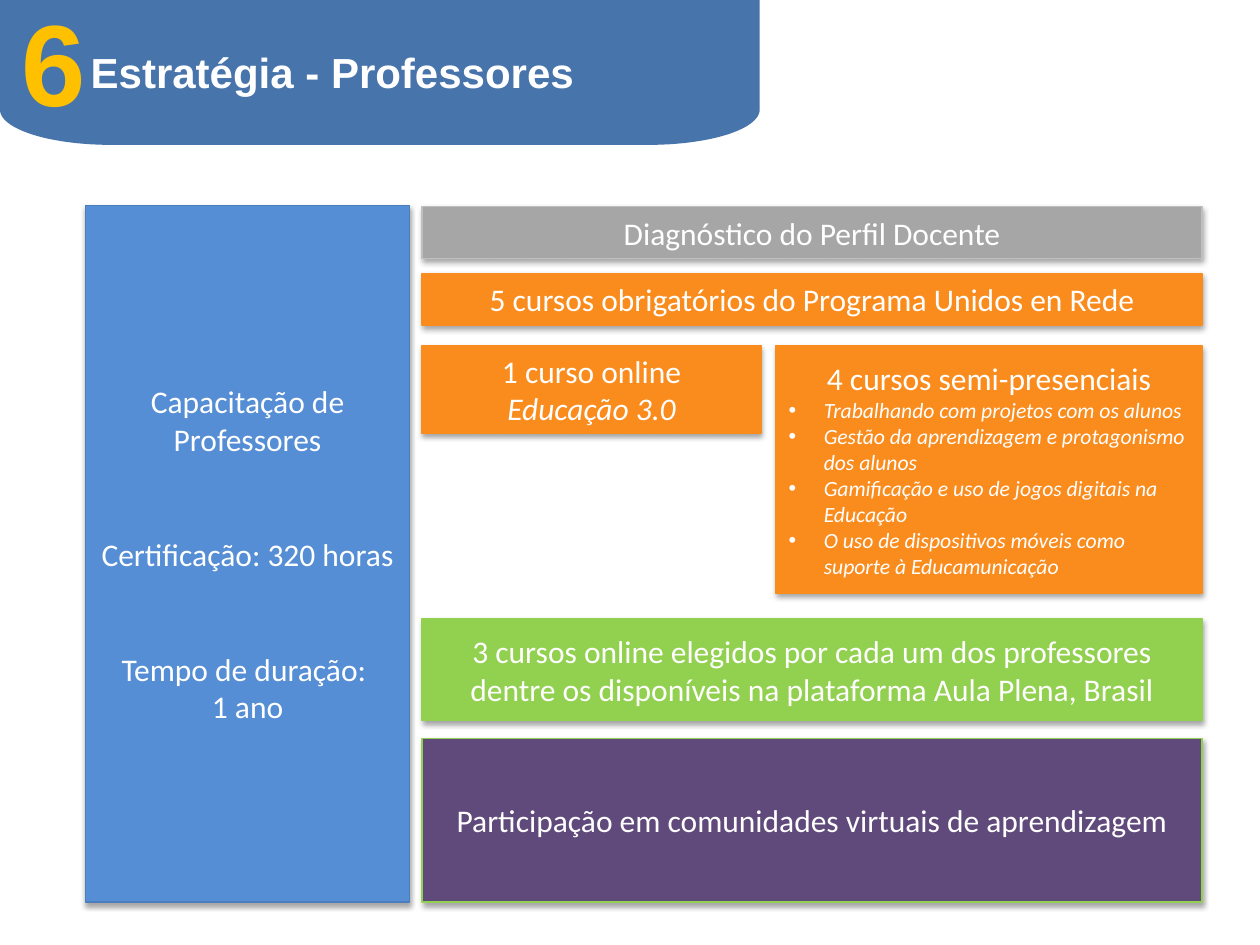
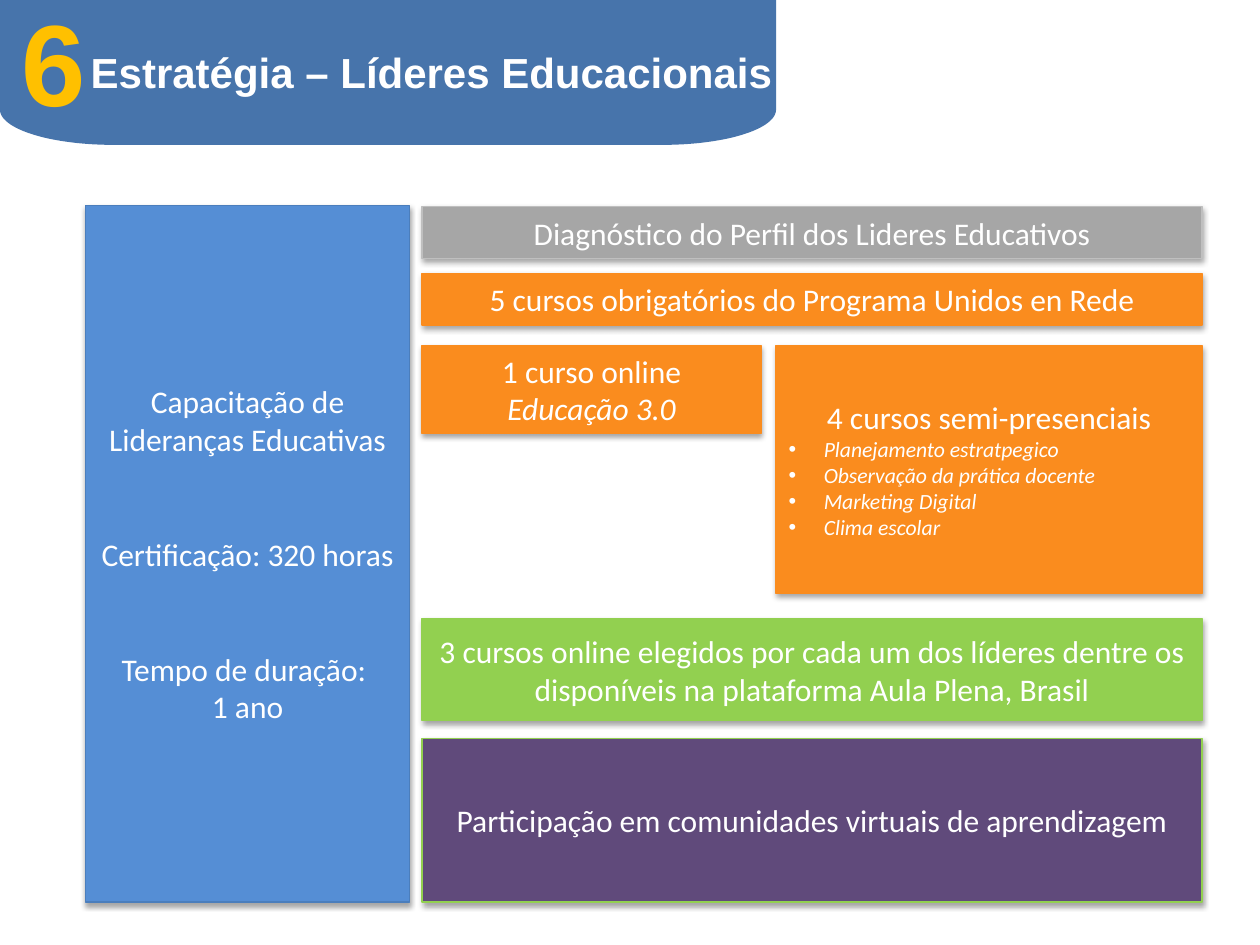
from dataclasses import dataclass
from math import cos, pi, sin

from lxml import etree
from pptx import Presentation
from pptx.dml.color import RGBColor
from pptx.enum.shapes import MSO_SHAPE
from pptx.enum.text import MSO_ANCHOR, PP_ALIGN
from pptx.oxml.ns import qn
from pptx.util import Inches, Pt

RECT = MSO_SHAPE.RECTANGLE
TOP, MIDDLE = MSO_ANCHOR.TOP, MSO_ANCHOR.MIDDLE
LEFT, CENTER = PP_ALIGN.LEFT, PP_ALIGN.CENTER

WHITE = RGBColor(0xFF, 0xFF, 0xFF)
BAND_BLUE = RGBColor(0x47, 0x74, 0xAB)
YELLOW = RGBColor(0xFF, 0xC0, 0x00)
BLUE = RGBColor(0x55, 0x8E, 0xD5)
BLUE_EDGE = RGBColor(0x4B, 0x7E, 0xBC)
GRAY = RGBColor(0xA6, 0xA6, 0xA6)
GRAY_EDGE = RGBColor(0xBF, 0xBF, 0xBF)
ORANGE = RGBColor(0xFA, 0x8C, 0x1E)
GREEN = RGBColor(0x92, 0xD0, 0x50)
PURPLE = RGBColor(0x60, 0x4A, 0x7B)

TITLE_FONT, BODY_FONT = "Arial", "Calibri"
COLUMN_LEFT, COLUMN_WIDTH = 3.35, 6.19
SECTION_GAP = Pt(44)
BULLET_INDENT = Inches(0.28)


@dataclass(frozen=True)
class Line:
    text: str
    italic: bool = False
    bullet: bool = False
    gap: bool = False


@dataclass(frozen=True)
class Card:
    lines: list[Line]
    top: float
    height: float
    fill: RGBColor
    edge: RGBColor
    left: float = COLUMN_LEFT
    width: float = COLUMN_WIDTH


@dataclass(frozen=True)
class Strategy:
    title: str
    band_width: float
    audience: str
    profile: str
    chooser: str
    courses: list[str]


STRATEGIES = [
    Strategy("Estratégia - Professores", 6.03, "Professores", "Docente", "professores", [
        "Trabalhando com projetos com os alunos",
        "Gestão da aprendizagem e protagonismo dos alunos",
        "Gamificação e uso de jogos digitais na Educação",
        "O uso de dispositivos móveis como suporte à Educamunicação",
    ]),
    Strategy("Estratégia – Líderes Educacionais", 6.16, "Lideranças Educativas",
             "dos Lideres Educativos", "líderes", [
                 "Planejamento estratpegico",
                 "Observação da prática docente",
                 "Marketing Digital",
                 "Clima escolar",
             ]),
]


def cards_for(strategy: Strategy) -> list[Card]:
    training = [
        Line(f"Capacitação de {strategy.audience}"),
        Line("Certificação: 320 horas", gap=True),
        Line("Tempo de duração: ", gap=True),
        Line("1 ano"),
    ]
    blended = [Line("4 cursos semi-presenciais")]
    blended += [Line(name, italic=True, bullet=True) for name in strategy.courses]
    elective = (f"3 cursos online elegidos por cada um dos {strategy.chooser} "
                "dentre os disponíveis na plataforma Aula Plena, Brasil")
    return [
        Card(training, 1.63, 5.53, BLUE, BLUE_EDGE, 0.68, 2.57),
        Card([Line(f"Diagnóstico do Perfil {strategy.profile}")], 1.64, 0.41, GRAY, GRAY_EDGE),
        Card([Line("5 cursos obrigatórios do Programa Unidos en Rede")],
             2.17, 0.41, ORANGE, ORANGE),
        Card([Line("1 curso online"), Line("Educação 3.0", italic=True)],
             2.74, 0.7, ORANGE, ORANGE, width=2.69),
        Card(blended, 2.74, 1.97, ORANGE, ORANGE, 6.16, 3.38),
        Card([Line(elective)], 4.91, 0.81, GREEN, GREEN),
        Card([Line("Participação em comunidades virtuais de aprendizagem")],
             5.86, 1.3, PURPLE, GREEN),
    ]


def format_run(r, font: str, size: float, color: RGBColor,
               bold: bool = False, italic: bool = False) -> None:
    r.font.name = font
    r.font.size = Pt(size)
    r.font.color.rgb = color
    r.font.bold = bold
    r.font.italic = italic


def add_bullet(p) -> None:
    pPr = p._p.get_or_add_pPr()
    pPr.set("marL", str(BULLET_INDENT))
    pPr.set("indent", str(-BULLET_INDENT))
    etree.SubElement(pPr, qn("a:buFont")).set("typeface", TITLE_FONT)
    etree.SubElement(pPr, qn("a:buChar")).set("char", "•")


def add_shadow(sp) -> None:
    sp.shadow.inherit = False
    effects = sp.element.spPr.find(qn("a:effectLst"))
    shadow = etree.SubElement(effects, qn("a:outerShdw"), blurRad=str(Pt(3.1)),
                              dist=str(Pt(1.8)), dir="5400000", rotWithShape="0")
    color = etree.SubElement(shadow, qn("a:srgbClr"), val="000000")
    etree.SubElement(color, qn("a:alpha"), val="35000")


def add_card(s, card: Card) -> None:
    sp = s.shapes.add_shape(RECT, Inches(card.left), Inches(card.top),
                            Inches(card.width), Inches(card.height))
    sp.fill.solid()
    sp.fill.fore_color.rgb = card.fill
    sp.line.color.rgb = card.edge
    sp.line.width = Pt(0.75)
    add_shadow(sp)
    tf = sp.text_frame
    tf.word_wrap = True
    tf.vertical_anchor = MIDDLE
    tf.text = "\n".join(line.text for line in card.lines)
    for p, line in zip(tf.paragraphs, card.lines):
        p.alignment = LEFT if line.bullet else CENTER
        if line.gap:
            p.space_before = SECTION_GAP
        if line.bullet:
            add_bullet(p)
        format_run(p.runs[0], BODY_FONT, 12.4 if line.bullet else 18, WHITE,
                   italic=line.italic)


def add_band(s, width: float):
    height, radius_y, steps = 1.15, 0.28, 24
    radius_x = width * 0.146
    angles = [pi / 2 * i / steps for i in range(steps + 1)]
    right = [(width - radius_x * (1 - cos(a)), height - radius_y * (1 - sin(a)))
             for a in angles]
    left = [(width - x, y) for x, y in reversed(right)]
    outline = [(width, 0), *right, *left]
    builder = s.shapes.build_freeform(0, 0)
    builder.add_line_segments([(Inches(x), Inches(y)) for x, y in outline], close=True)
    band = builder.convert_to_shape()
    band.fill.solid()
    band.fill.fore_color.rgb = BAND_BLUE
    band.line.fill.background()
    band.shadow.inherit = False
    return band


def set_heading(sp, text: str, size: float, color: RGBColor) -> None:
    tf = sp.text_frame
    tf.word_wrap = True
    tf.vertical_anchor = TOP
    tf.text = text
    p = tf.paragraphs[0]
    p.alignment = LEFT
    format_run(p.runs[0], TITLE_FONT, size, color, bold=True)


def add_header(s, strategy: Strategy) -> None:
    band = add_band(s, strategy.band_width)
    title = s.shapes.title
    band.element.addnext(title.element)
    title.left, title.top = Inches(0.62), Inches(0.32)
    title.width, title.height = Inches(8.34), Inches(0.5)
    set_heading(title, strategy.title, 24, WHITE)
    number = s.shapes.add_textbox(Inches(0.07), Inches(-0.12), Inches(0.49), Inches(1.21))
    set_heading(number, "6", 66, YELLOW)


def main() -> None:
    prs = Presentation()
    prs.slide_width, prs.slide_height = Inches(10), Inches(7.5)
    for strategy in STRATEGIES:
        s = prs.slides.add_slide(prs.slide_layouts[5])
        for card in cards_for(strategy):
            add_card(s, card)
        add_header(s, strategy)
    prs.save("out.pptx")


if __name__ == "__main__":
    main()
